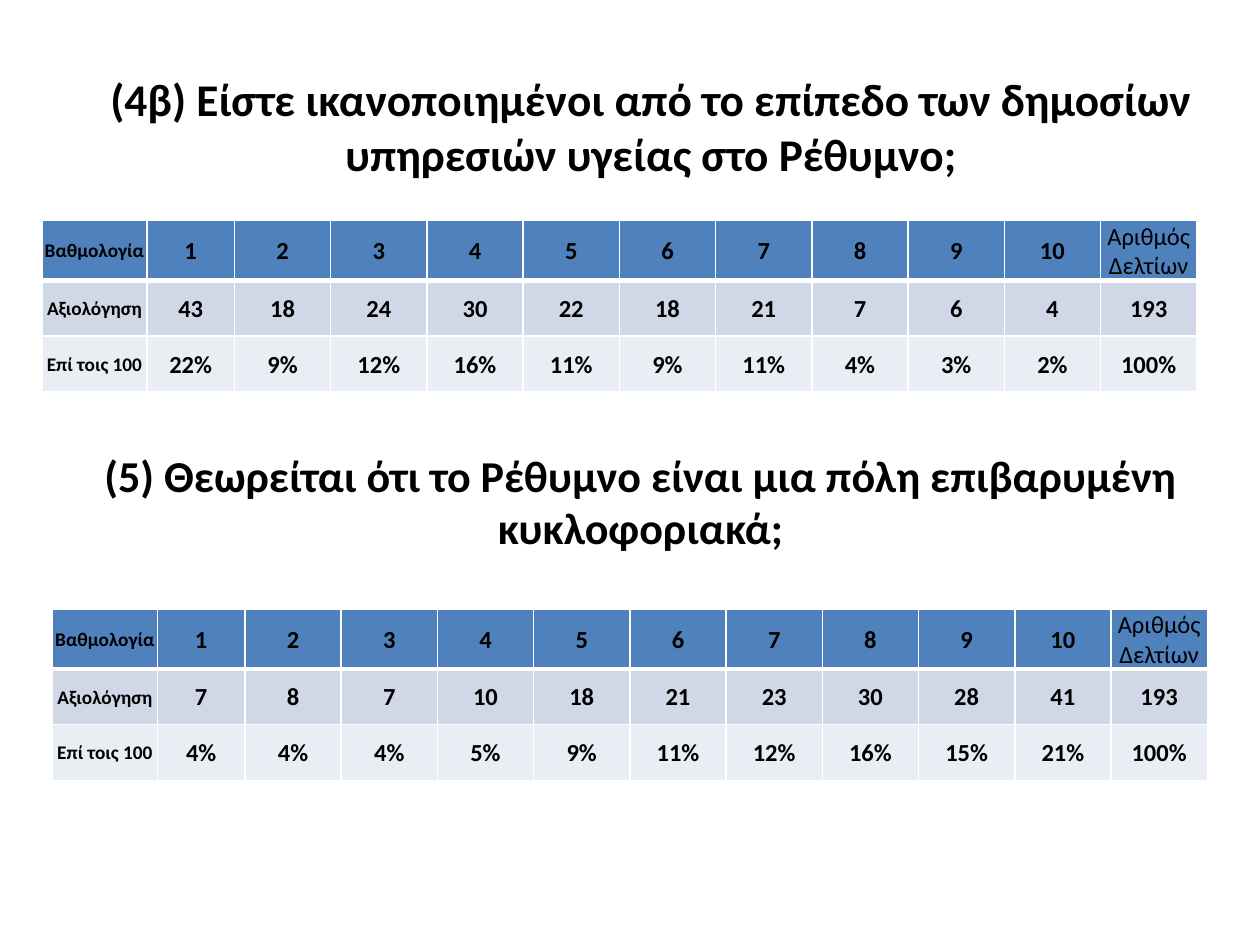
from lxml import etree
from pptx import Presentation
from pptx.dml.color import RGBColor
from pptx.enum.text import MSO_ANCHOR, PP_ALIGN
from pptx.oxml.ns import qn
from pptx.util import Inches, Pt

CENTER = PP_ALIGN.CENTER
MIDDLE = MSO_ANCHOR.MIDDLE
BLANK_LAYOUT = 6

SURVEY = [
    {
        "question": "(4β) Είστε ικανοποιημένοι από το επίπεδο των δημοσίων "
                    "υπηρεσιών υγείας στο Ρέθυμνο;",
        "question_box": (8, 7, 108, 10),
        "question_size": 25.9,
        "table_corner": (4, 21),
        "votes": [43, 18, 24, 30, 22, 18, 21, 7, 6, 4],
    },
    {
        "question": "(5) Θεωρείται ότι το Ρέθυμνο είναι μια πόλη επιβαρυμένη "
                    "κυκλοφοριακά;",
        "question_box": (7, 42, 108, 11.4),
        "question_size": 25.2,
        "table_corner": (5, 58),
        "votes": [7, 8, 7, 10, 18, 21, 23, 30, 28, 41],
    },
]


def color(hex_string):
    return RGBColor.from_string(hex_string)


def grid(units):
    """Length of a number of grid units, twelve to the inch."""
    return Inches(units / 12)


def write(text_frame, text, size, bold=True, font="Calibri", ink="000000"):
    paragraph = text_frame.paragraphs[0]
    paragraph.alignment = CENTER
    run = paragraph.add_run()
    run.text = text
    run.font.name = font
    run.font.size = Pt(size)
    run.font.bold = bold
    run.font.color.rgb = color(ink)


class SurveySlide:
    row_fills = ["4F81BD", "D0D8E8", "E9EDF4"]
    border_color = "FFFFFF"
    label_size, value_size = 11, 14
    # The label, the first score, then ten equal columns
    column_widths = [10, 8.33] + [9.17] * 10
    row_height = 5.3

    def __init__(self, presentation):
        layout = presentation.slide_layouts[BLANK_LAYOUT]
        self.slide = presentation.slides.add_slide(layout)

    def add_question(self, text, box, size):
        shape = self.slide.shapes.add_textbox(*map(grid, box))
        shape.text_frame.word_wrap = True
        shape.text_frame.vertical_anchor = MIDDLE
        write(shape.text_frame, text, size)

    def add_score_table(self, corner, votes):
        total = sum(votes)
        rows = [
            ["Βαθμολογία", *range(1, len(votes) + 1), "Αριθμός Δελτίων"],
            ["Αξιολόγηση", *votes, total],
            ["Επί τοις 100", *(f"{vote / total:.0%}" for vote in votes), "100%"],
        ]
        size = sum(self.column_widths), self.row_height * len(rows)
        table = self.slide.shapes.add_table(
            len(rows), len(rows[0]), *map(grid, (*corner, *size))).table
        for column, width in zip(table.columns, self.column_widths):
            column.width = grid(width)
        for row_index, row in enumerate(rows):
            table.rows[row_index].height = grid(self.row_height)
            for column_index, value in enumerate(row):
                self.fill_cell(table.cell(row_index, column_index), str(value),
                               row_index, column_index)

    def fill_cell(self, cell, text, row_index, column_index):
        is_header = row_index == 0
        is_label = column_index == 0
        is_total = column_index == len(self.column_widths) - 1
        cell.margin_left = cell.margin_right = cell.margin_top = Inches(0.01)
        cell.margin_bottom = 0
        cell.vertical_anchor = MIDDLE
        cell.fill.solid()
        cell.fill.fore_color.rgb = color(self.row_fills[row_index])
        write(cell.text_frame, text,
              self.label_size if is_label else self.value_size,
              bold=not (is_header and is_total))
        # A thick rule parts the header from the rows below
        self.add_borders(cell, top=3 if row_index == 1 else 1,
                         bottom=3 if is_header else 1)

    def add_borders(self, cell, top, bottom):
        properties = cell._tc.get_or_add_tcPr()
        sides = {"a:lnL": 1, "a:lnR": 1, "a:lnT": top, "a:lnB": bottom}
        for position, (tag, width) in enumerate(sides.items()):
            line = etree.Element(qn(tag), w=str(Pt(width)))
            fill = etree.SubElement(line, qn("a:solidFill"))
            etree.SubElement(fill, qn("a:srgbClr"), val=self.border_color)
            properties.insert(position, line)


def main():
    presentation = Presentation()
    presentation.slide_width = Inches(10)
    presentation.slide_height = Inches(7.5)
    survey_slide = SurveySlide(presentation)

    # Each question stands above its table of scores
    for item in SURVEY:
        survey_slide.add_question(item["question"], item["question_box"],
                                  item["question_size"])
        survey_slide.add_score_table(item["table_corner"], item["votes"])

    presentation.save("out.pptx")


if __name__ == "__main__":
    main()
